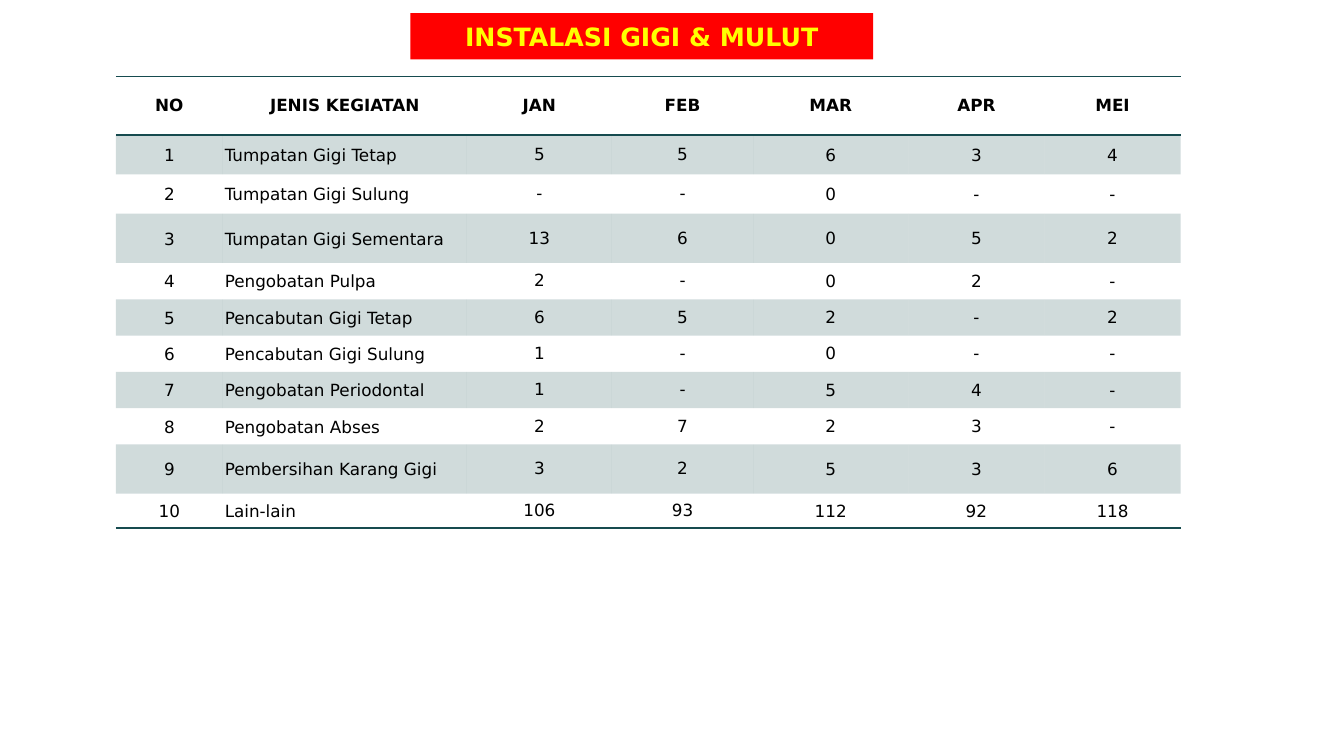
from lxml.etree import SubElement as Sub
from pptx import Presentation
from pptx.dml.color import RGBColor
from pptx.enum.text import MSO_ANCHOR as Anchor, MSO_AUTO_SIZE as Auto, PP_ALIGN as Align
from pptx.oxml import parse_xml
from pptx.oxml.ns import nsdecls, qn
from pptx.util import Inches, Pt

FONT = "DejaVu Sans"
TEAL = "164B4F"
PLAIN = "{2D5ABB26-0587-4C30-8999-92F81FD0307C}"
WIDTHS = [1.06, 2.42, 1.44, 1.4, 1.54, 1.35, 1.35]
HEIGHTS = [0.58, 0.39, 0.39, 0.49, 0.36, 0.36, 0.36, 0.36, 0.36, 0.49, 0.34]
INSETS = [(0.02, 0.02, 0.02, 0)] * 2 + [(0, 0, 0, 0)] * 2 + [(0.01, 0.01, 0.01, 0)] * 3
HEAD = ["NO", "JENIS KEGIATAN", "JAN", "FEB", "MAR", "APR", "MEI"]
ROWS = [
    ("Tumpatan Gigi Tetap", "5", "5", "6", "3", "4"),
    ("Tumpatan Gigi Sulung", "-", "-", "0", "-", "-"),
    ("Tumpatan Gigi Sementara", "13", "6", "0", "5", "2"),
    ("Pengobatan Pulpa", "2", "-", "0", "2", "-"),
    ("Pencabutan Gigi Tetap", "6", "5", "2", "-", "2"),
    ("Pencabutan Gigi Sulung", "1", "-", "0", "-", "-"),
    ("Pengobatan Periodontal", "1", "-", "5", "4", "-"),
    ("Pengobatan Abses", "2", "7", "2", "3", "-"),
    ("Pembersihan Karang Gigi", "3", "2", "5", "3", "6"),
    ("Lain-lain", "106", "93", "112", "92", "118"),
]


def color(code):
    return RGBColor.from_string(code)


def write(frame, text, size=12, ink="000000", bold=False, align=Align.CENTER):
    para = frame.paragraphs[0]
    para.alignment = align
    run = para.add_run()
    run.text = text
    font = run.font
    font.name, font.size, font.bold = FONT, Pt(size), bold
    font.color.rgb = color(ink)


def paint(fill, code, alpha=None):
    fill.solid()
    fill.fore_color.rgb = color(code)
    if alpha:
        tint = fill._xPr.find(".//" + qn("a:srgbClr"))
        Sub(tint, qn("a:alpha"), val=str(alpha * 1000))


def add_title(slide, text):
    title = slide.shapes.title
    title.left, title.top = Inches(4.07), Inches(0.13)
    title.width, title.height = Inches(4.59), Inches(0.46)
    title._element.spPr.append(parse_xml(
        f'<a:prstGeom {nsdecls("a")} prst="roundRect"><a:avLst/></a:prstGeom>'))
    paint(title.fill, "FF0000")
    title.line.fill.background()
    title.shadow.inherit = False
    frame = title.text_frame
    frame.word_wrap = True
    frame.auto_size = Auto.NONE
    frame.vertical_anchor = Anchor.MIDDLE
    write(frame, text, size=18, ink="FFFF00", bold=True)


def rule(cell, side):
    props = cell._tc.get_or_add_tcPr()
    line = Sub(props, qn("a:ln" + side), w=str(Pt(1)))
    fill = Sub(line, qn("a:solidFill"))
    Sub(fill, qn("a:srgbClr"), val=TEAL)


def fill_cell(cell, text, inset, sides="", band=False, **style):
    left, top, right, bottom = map(Inches, inset)
    cell.margin_left, cell.margin_top = left, top
    cell.margin_right, cell.margin_bottom = right, bottom
    cell.vertical_anchor = Anchor.MIDDLE
    for side in sides:
        rule(cell, side)
    if band:
        paint(cell.fill, TEAL, alpha=20)
    else:
        cell.fill.background()
    write(cell.text_frame, text, **style)


def add_grid(slide):
    frame = slide.shapes.add_table(
        len(HEIGHTS), len(WIDTHS), Inches(1.15), Inches(0.76),
        Inches(sum(WIDTHS)), Inches(sum(HEIGHTS)))
    table = frame.table
    table.first_row = table.horz_banding = False
    table._tbl.tblPr.find(qn("a:tableStyleId")).text = PLAIN
    for col, width in zip(table.columns, WIDTHS):
        col.width = Inches(width)
    for row, height in zip(table.rows, HEIGHTS):
        row.height = Inches(height)
    for col, text in enumerate(HEAD):
        fill_cell(table.cell(0, col), text, (0.2, 0.08, 0.2, 0.08), sides="TB", bold=True)
    for row, data in enumerate(ROWS, 1):
        sides = "B" if row == len(ROWS) else ""
        for col, text in enumerate((str(row), *data)):
            align = Align.LEFT if col == 1 else Align.CENTER
            fill_cell(table.cell(row, col), text, INSETS[col], sides=sides,
                      band=row % 2 == 1, align=align)


def main():
    deck = Presentation()
    deck.slide_width, deck.slide_height = Inches(13.33), Inches(7.5)
    slide = deck.slides.add_slide(deck.slide_layouts[5])
    add_title(slide, "INSTALASI GIGI & MULUT")
    add_grid(slide)
    deck.save("out.pptx")


if __name__ == "__main__":
    main()
